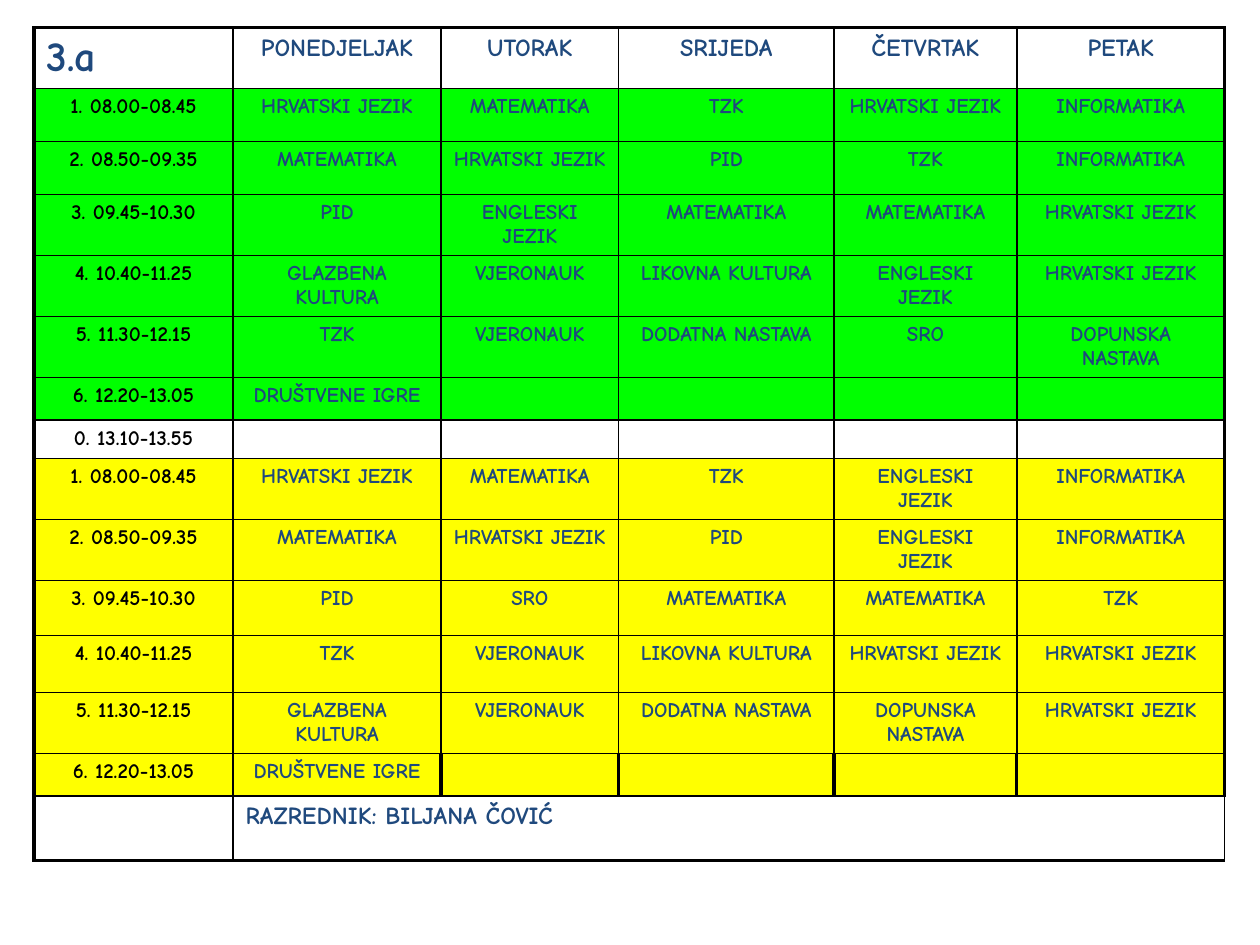
from lxml.etree import SubElement as add_element
from pptx import Presentation
from pptx.dml.color import RGBColor
from pptx.enum.text import PP_ALIGN as Align
from pptx.oxml.ns import qn
from pptx.util import Inches, Pt

FONT = "Comic Neue"
BLUE, BLACK = "1F497D", "000000"
GREEN, YELLOW = "00FF00", "FFFF00"
THIN, THICK = 1, 2.25

COLUMN_WIDTHS = [1.58, 1.65, 1.41, 1.71, 1.45, 1.65]
# Row height and fill, then the six texts of the row
TIMETABLE = [
    (0.48, None, "3.a|PONEDJELJAK|UTORAK|SRIJEDA|ČETVRTAK|PETAK"),
    (0.42, GREEN, "1. 08.00-08.45|HRVATSKI JEZIK|MATEMATIKA|TZK|HRVATSKI JEZIK|INFORMATIKA"),
    (0.42, GREEN, "2. 08.50-09.35|MATEMATIKA|HRVATSKI JEZIK|PID|TZK|INFORMATIKA"),
    (0.48, GREEN, "3. 09.45-10.30|PID|ENGLESKI JEZIK|MATEMATIKA|MATEMATIKA|HRVATSKI JEZIK"),
    (0.48, GREEN, "4. 10.40-11.25|GLAZBENA KULTURA|VJERONAUK|LIKOVNA KULTURA|ENGLESKI JEZIK|HRVATSKI JEZIK"),
    (0.48, GREEN, "5. 11.30-12.15|TZK|VJERONAUK|DODATNA NASTAVA|SRO|DOPUNSKA NASTAVA"),
    (0.34, GREEN, "6. 12.20-13.05|DRUŠTVENE IGRE||||"),
    (0.29, None, "0. 13.10-13.55|||||"),
    (0.48, YELLOW, "1. 08.00-08.45|HRVATSKI JEZIK|MATEMATIKA|TZK|ENGLESKI JEZIK|INFORMATIKA"),
    (0.48, YELLOW, "2. 08.50-09.35|MATEMATIKA|HRVATSKI JEZIK|PID|ENGLESKI JEZIK|INFORMATIKA"),
    (0.44, YELLOW, "3. 09.45-10.30|PID|SRO|MATEMATIKA|MATEMATIKA|TZK"),
    (0.45, YELLOW, "4. 10.40-11.25|TZK|VJERONAUK|LIKOVNA KULTURA|HRVATSKI JEZIK|HRVATSKI JEZIK"),
    (0.48, YELLOW, "5. 11.30-12.15|GLAZBENA KULTURA|VJERONAUK|DODATNA NASTAVA|DOPUNSKA NASTAVA|HRVATSKI JEZIK"),
    (0.34, YELLOW, "6. 12.20-13.05|DRUŠTVENE IGRE||||"),
    (0.51, None, "|RAZREDNIK: BILJANA ČOVIĆ||||"),
]
LAST_ROW, LAST_COLUMN = len(TIMETABLE) - 1, len(COLUMN_WIDTHS) - 1


def write_text(cell, text, *, size=12, color=BLUE, align=Align.CENTER):
    paragraph = cell.text_frame.paragraphs[0]
    if not text:
        # An empty line keeps the text size, so that the row does not grow
        paragraph._p.get_or_add_endParaRPr().set("sz", str(size * 100))
        return
    paragraph.alignment = align
    run = paragraph.add_run()
    run.text = text
    run.font.name, run.font.size, run.font.bold = FONT, Pt(size), True
    run.font.color.rgb = RGBColor.from_string(color)


def set_borders(cell, **widths):
    """Draw black borders; widths are points by side, in the order L, R, T, B."""
    properties = cell._tc.get_or_add_tcPr()
    for side, width in widths.items():
        line = add_element(properties, qn(f"a:ln{side}"), w=str(Pt(width)))
        fill = add_element(line, qn("a:solidFill"))
        add_element(fill, qn("a:srgbClr"), val=BLACK)


presentation = Presentation()
presentation.slide_width, presentation.slide_height = Inches(10), Inches(7.5)
slide = presentation.slides.add_slide(presentation.slide_layouts[6])

table = slide.shapes.add_table(
    len(TIMETABLE), len(COLUMN_WIDTHS), Inches(0.27), Inches(0.22),
    Inches(sum(COLUMN_WIDTHS)), Inches(sum(row[0] for row in TIMETABLE)),
).table
table.first_row = table.horz_banding = False
for column, width in zip(table.columns, COLUMN_WIDTHS):
    column.width = Inches(width)

for row, (height, fill, texts) in enumerate(TIMETABLE):
    table.rows[row].height = Inches(height)
    for column, text in enumerate(texts.split("|")):
        cell = table.cell(row, column)
        if (row, column) == (0, 0):
            write_text(cell, text, size=24, align=Align.LEFT)
        elif row == 0:
            write_text(cell, text, size=14)
        elif row == LAST_ROW:
            write_text(cell, text, size=14, align=Align.LEFT)
        else:
            write_text(cell, text, color=BLACK if column == 0 else BLUE)

        # The frame is thick, and so are the dividers of the last lesson
        last_lesson = row == LAST_ROW - 1
        set_borders(
            cell,
            L=THICK if column == 0 or (last_lesson and column > 1) else THIN,
            R=THICK if column == LAST_COLUMN or (last_lesson and column > 0) else THIN,
            T=THICK if row == 0 else THIN,
            B=THICK if row == LAST_ROW else THIN,
        )
        if fill:
            cell.fill.solid()
            cell.fill.fore_color.rgb = RGBColor.from_string(fill)
        else:
            cell.fill.background()

table.cell(LAST_ROW, 1).merge(table.cell(LAST_ROW, LAST_COLUMN))

presentation.save("out.pptx")
